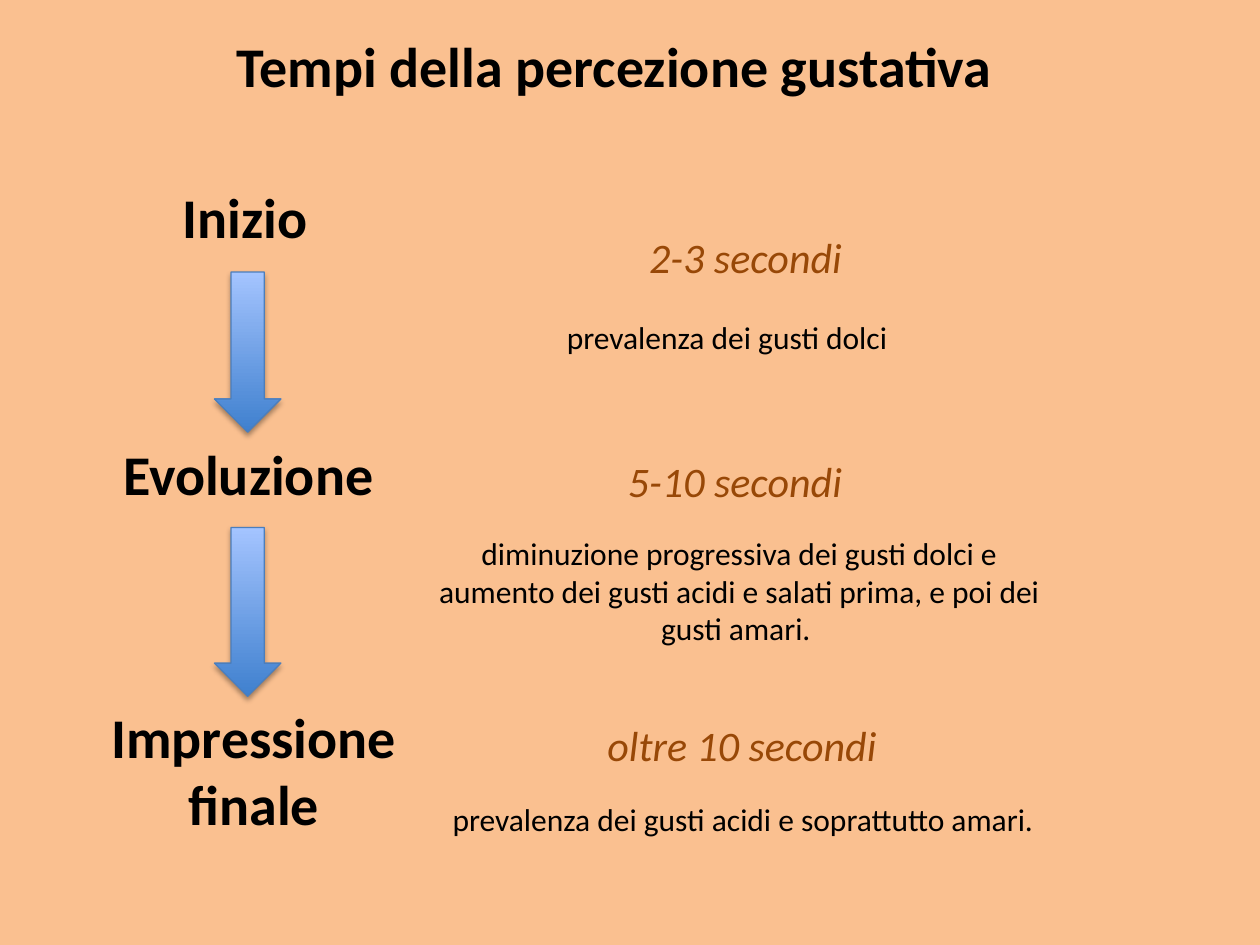
import lxml.etree
import pptx
import pptx.dml.color
import pptx.enum.shapes
import pptx.enum.text
import pptx.oxml.ns
import pptx.util

Pt = pptx.util.Pt
RGBColor = pptx.dml.color.RGBColor
ALIGN = pptx.enum.text.PP_ALIGN

PEACH = RGBColor(0xFA, 0xC0, 0x90)
BLACK = RGBColor(0x00, 0x00, 0x00)
BROWN = RGBColor(0x98, 0x48, 0x07)
ARROW_BOTTOM = RGBColor(0x3F, 0x80, 0xCE)
ARROW_TOP = RGBColor(0xA4, 0xC4, 0xFF)
ARROW_LINE = RGBColor(0x4B, 0x7E, 0xBC)

HEADING = {"size": 32, "bold": True}
DURATION = {"size": 24, "italic": True, "color": BROWN}
DESCRIPTION = {"size": 18}


def write_text(shape, text, *, size, color=BLACK, bold=False, italic=False,
               align=ALIGN.CENTER, wrap=False):
    """Fill the shape with one paragraph per line of text."""
    frame = shape.text_frame
    frame.text = text
    frame.word_wrap = wrap
    frame.auto_size = pptx.enum.text.MSO_AUTO_SIZE.SHAPE_TO_FIT_TEXT
    frame.vertical_anchor = pptx.enum.text.MSO_ANCHOR.TOP
    for paragraph in frame.paragraphs:
        paragraph.alignment = align
        for run in paragraph.runs:
            run.font.name = "Calibri"
            run.font.size = Pt(size)
            run.font.bold = bold
            run.font.italic = italic
            run.font.color.rgb = color


def add_soft_shadow(shape):
    shape.shadow.inherit = False
    qn = pptx.oxml.ns.qn
    effects = shape.element.spPr.find(qn("a:effectLst"))
    shadow = lxml.etree.SubElement(
        effects, qn("a:outerShdw"), blurRad=str(Pt(3.1)), dist=str(Pt(1.8)),
        dir="5400000", rotWithShape="0")
    color = lxml.etree.SubElement(shadow, qn("a:srgbClr"), val="000000")
    lxml.etree.SubElement(color, qn("a:alpha"), val="35000")


class TimelineSlide:
    def __init__(self, presentation):
        self.slide = presentation.slides.add_slide(presentation.slide_layouts[5])
        background = self.slide.background.fill
        background.solid()
        background.fore_color.rgb = PEACH

    def title(self, text, left, top, width, height):
        title = self.slide.shapes.title
        title.left, title.top = Pt(left), Pt(top)
        title.width, title.height = Pt(width), Pt(height)
        write_text(title, text, align=ALIGN.LEFT, **HEADING)

    def text(self, text, left, top, width, height, **style):
        box = self.slide.shapes.add_textbox(Pt(left), Pt(top), Pt(width), Pt(height))
        write_text(box, text, **style)

    def down_arrow(self, left, top, width, height):
        arrow = self.slide.shapes.add_shape(
            pptx.enum.shapes.MSO_SHAPE.DOWN_ARROW,
            Pt(left), Pt(top), Pt(width), Pt(height))
        arrow.fill.gradient()
        arrow.fill.gradient_angle = 90
        for stop, color in zip(arrow.fill.gradient_stops, (ARROW_BOTTOM, ARROW_TOP)):
            stop.color.rgb = color
        arrow.line.color.rgb = ARROW_LINE
        arrow.line.width = Pt(0.75)
        add_soft_shadow(arrow)


def main():
    presentation = pptx.Presentation()
    presentation.slide_width, presentation.slide_height = Pt(720), Pt(540)
    timeline = TimelineSlide(presentation)
    timeline.title("Tempi della percezione gustativa", 128, 14.5, 455, 46)

    timeline.text("Inizio", 97, 101, 86.5, 46, **HEADING)
    timeline.text("Evoluzione", 62, 247.5, 160, 46, **HEADING)
    timeline.text("Impressione\nfinale", 55.5, 398, 179, 85, **HEADING)

    for top, height in ((155.5, 91.5), (301.5, 96.5)):
        timeline.down_arrow(122.5, top, 38, height)

    timeline.text("2-3 secondi", 360, 129, 132, 36, **DURATION)
    timeline.text("5-10 secondi", 348, 257, 144, 36, **DURATION)
    timeline.text("oltre 10 secondi", 336, 407.5, 176, 36, **DURATION)

    timeline.text("prevalenza dei gusti dolci ", 306, 178, 223, 29,
                  wrap=True, **DESCRIPTION)
    timeline.text("diminuzione progressiva dei gusti dolci e aumento dei gusti "
                  "acidi e salati prima, e poi dei gusti amari. ",
                  242.5, 301.5, 360, 72.5, wrap=True, **DESCRIPTION)
    timeline.text("prevalenza dei gusti acidi e soprattutto amari.",
                  251.5, 453.5, 351, 29, align=ALIGN.LEFT, **DESCRIPTION)

    presentation.save("out.pptx")


if __name__ == "__main__":
    main()
